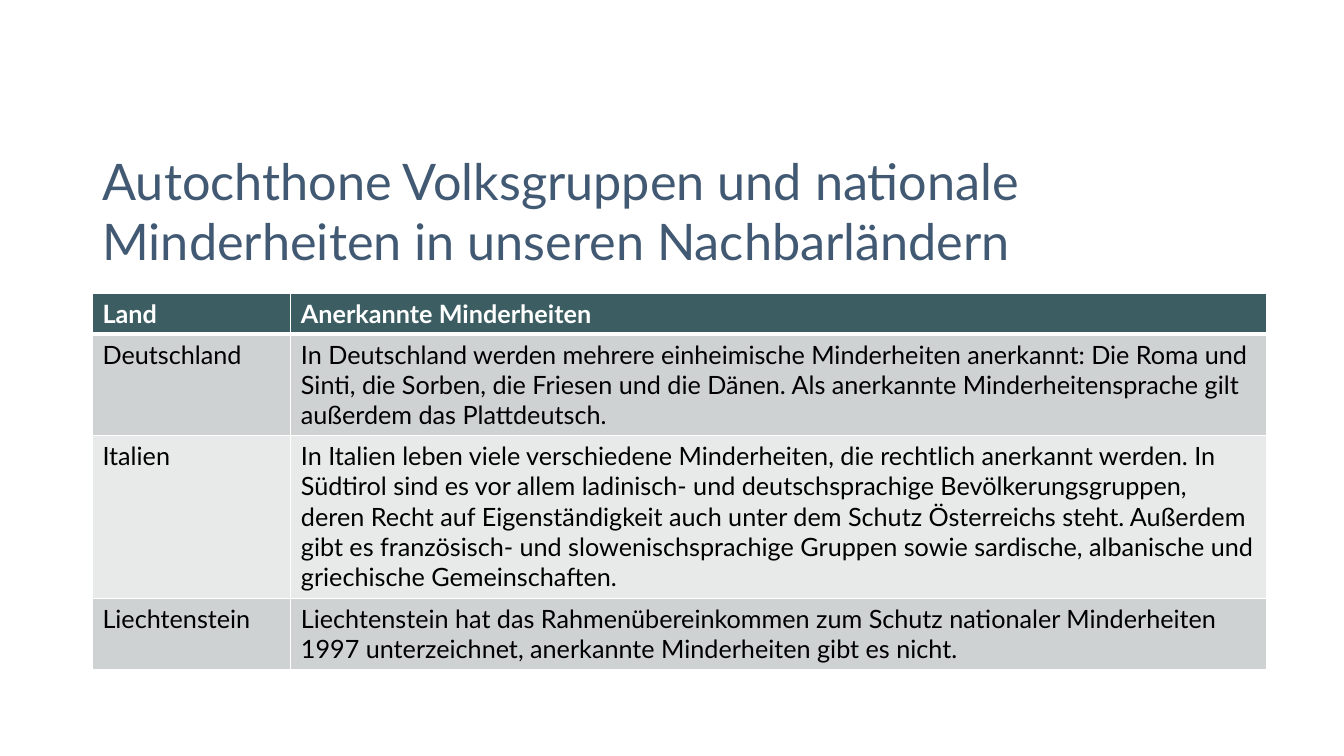
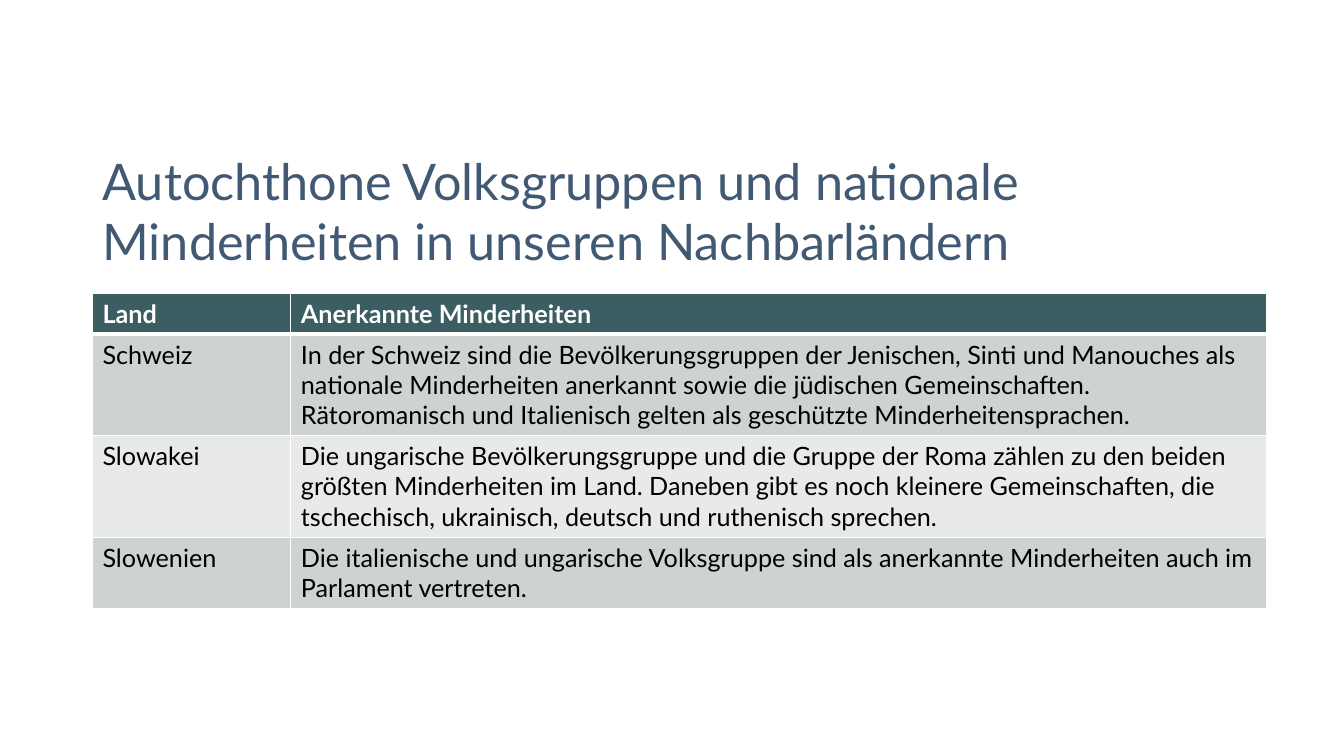
import dataclasses

import lxml.etree
import pptx
import pptx.dml.color
import pptx.enum.text
import pptx.oxml.ns
import pptx.presentation
import pptx.slide
import pptx.table
import pptx.util

Cm = pptx.util.Cm
Pt = pptx.util.Pt
RGBColor = pptx.dml.color.RGBColor

BLUE = RGBColor(0x41, 0x59, 0x72)
TEAL = RGBColor(0x3C, 0x5E, 0x62)
GREY = RGBColor(0xCE, 0xD2, 0xD3)
PALE = RGBColor(0xE8, 0xEA, 0xEA)
WHITE = RGBColor(0xFF, 0xFF, 0xFF)
BLACK = RGBColor(0x00, 0x00, 0x00)

FONT = "Lato"
TITLE = "Autochthone Volksgruppen und nationale Minderheiten in unseren Nachbarländern"
LEFT = Cm(2.33)
COLS = (Cm(5), Cm(24.59))
PAD = Cm(0.25)
LINE = Cm(0.77)
THIN = Pt(1)
THICK = Pt(3)


@dataclasses.dataclass(frozen=True)
class Entry:
    land: str
    text: str
    lines: int


HEAD = Entry("Land", "Anerkannte Minderheiten", 1)

PAGES: tuple[tuple[Entry, ...], ...] = (
    (
        Entry(
            "Deutschland",
            "In Deutschland werden mehrere einheimische Minderheiten anerkannt: "
            "Die Roma und Sinti, die Sorben, die Friesen und die Dänen. "
            "Als anerkannte Minderheitensprache gilt außerdem das Plattdeutsch.",
            3,
        ),
        Entry(
            "Italien",
            "In Italien leben viele verschiedene Minderheiten, die rechtlich anerkannt "
            "werden. In Südtirol sind es vor allem ladinisch- und deutschsprachige "
            "Bevölkerungsgruppen, deren Recht auf Eigenständigkeit auch unter dem Schutz "
            "Österreichs steht. Außerdem gibt es französisch- und slowenischsprachige "
            "Gruppen sowie sardische, albanische und griechische Gemeinschaften.",
            5,
        ),
        Entry(
            "Liechtenstein",
            "Liechtenstein hat das Rahmenübereinkommen zum Schutz nationaler Minderheiten "
            "1997 unterzeichnet, anerkannte Minderheiten gibt es nicht.",
            2,
        ),
    ),
    (
        Entry(
            "Schweiz",
            "In der Schweiz sind die Bevölkerungsgruppen der Jenischen, Sinti und "
            "Manouches als nationale Minderheiten anerkannt sowie die jüdischen "
            "Gemeinschaften. Rätoromanisch und Italienisch gelten als geschützte "
            "Minderheitensprachen.",
            3,
        ),
        Entry(
            "Slowakei",
            "Die ungarische Bevölkerungsgruppe und die Gruppe der Roma zählen zu den "
            "beiden größten Minderheiten im Land. Daneben gibt es noch kleinere "
            "Gemeinschaften, die tschechisch, ukrainisch, deutsch und ruthenisch sprechen.",
            3,
        ),
        Entry(
            "Slowenien",
            "Die italienische und ungarische Volksgruppe sind als anerkannte "
            "Minderheiten auch im Parlament vertreten.",
            2,
        ),
    ),
)


def style(para, size: int, color: RGBColor, bold: bool = False) -> None:
    para.font.name = FONT
    para.font.size = Pt(size)
    para.font.bold = bold
    para.font.color.rgb = color


def add_title(slide: pptx.slide.Slide) -> None:
    title = slide.shapes.title
    title.left, title.top = LEFT, Cm(3.68)
    title.width, title.height = Cm(29.21), Cm(3.23)
    frame = title.text_frame
    frame.text = TITLE
    frame.auto_size = pptx.enum.text.MSO_AUTO_SIZE.NONE
    frame.vertical_anchor = pptx.enum.text.MSO_ANCHOR.MIDDLE
    para = frame.paragraphs[0]
    para.alignment = pptx.enum.text.PP_ALIGN.LEFT
    style(para, 36, BLUE)


def add_edges(cell, row: int) -> None:
    qn = pptx.oxml.ns.qn
    edges = {
        "lnL": THIN,
        "lnR": THIN,
        "lnT": THICK if row == 1 else THIN,
        "lnB": THICK if row == 0 else THIN,
    }
    props = cell._tc.get_or_add_tcPr()
    for tag, width in edges.items():
        edge = lxml.etree.SubElement(props, qn("a:" + tag), w=str(int(width)))
        fill = lxml.etree.SubElement(edge, qn("a:solidFill"))
        lxml.etree.SubElement(fill, qn("a:srgbClr"), val=str(WHITE))


def fill_cell(cell, row: int, text: str) -> None:
    head = row == 0
    cell.text = text
    style(cell.text_frame.paragraphs[0], 18, WHITE if head else BLACK, head)
    add_edges(cell, row)
    cell.fill.solid()
    cell.fill.fore_color.rgb = TEAL if head else (GREY if row % 2 else PALE)


def add_table(slide: pptx.slide.Slide, page: tuple[Entry, ...]) -> None:
    rows = (HEAD, *page)
    highs = [PAD + LINE * entry.lines for entry in rows]
    frame = slide.shapes.add_table(
        len(rows), len(COLS), LEFT, Cm(7.4), sum(COLS), sum(highs)
    )
    table: pptx.table.Table = frame.table
    for col, width in zip(table.columns, COLS):
        col.width = width
    for row, (entry, high) in enumerate(zip(rows, highs)):
        table.rows[row].height = high
        for col, text in enumerate((entry.land, entry.text)):
            fill_cell(table.cell(row, col), row, text)


def add_page(deck: pptx.presentation.Presentation, page: tuple[Entry, ...]) -> None:
    slide = deck.slides.add_slide(deck.slide_layouts.get_by_name("Title Only"))
    add_title(slide)
    add_table(slide, page)


def main() -> None:
    deck = pptx.Presentation()
    deck.slide_width, deck.slide_height = Cm(33.87), Cm(19.05)
    for page in PAGES:
        add_page(deck, page)
    deck.save("out.pptx")


if __name__ == "__main__":
    main()
